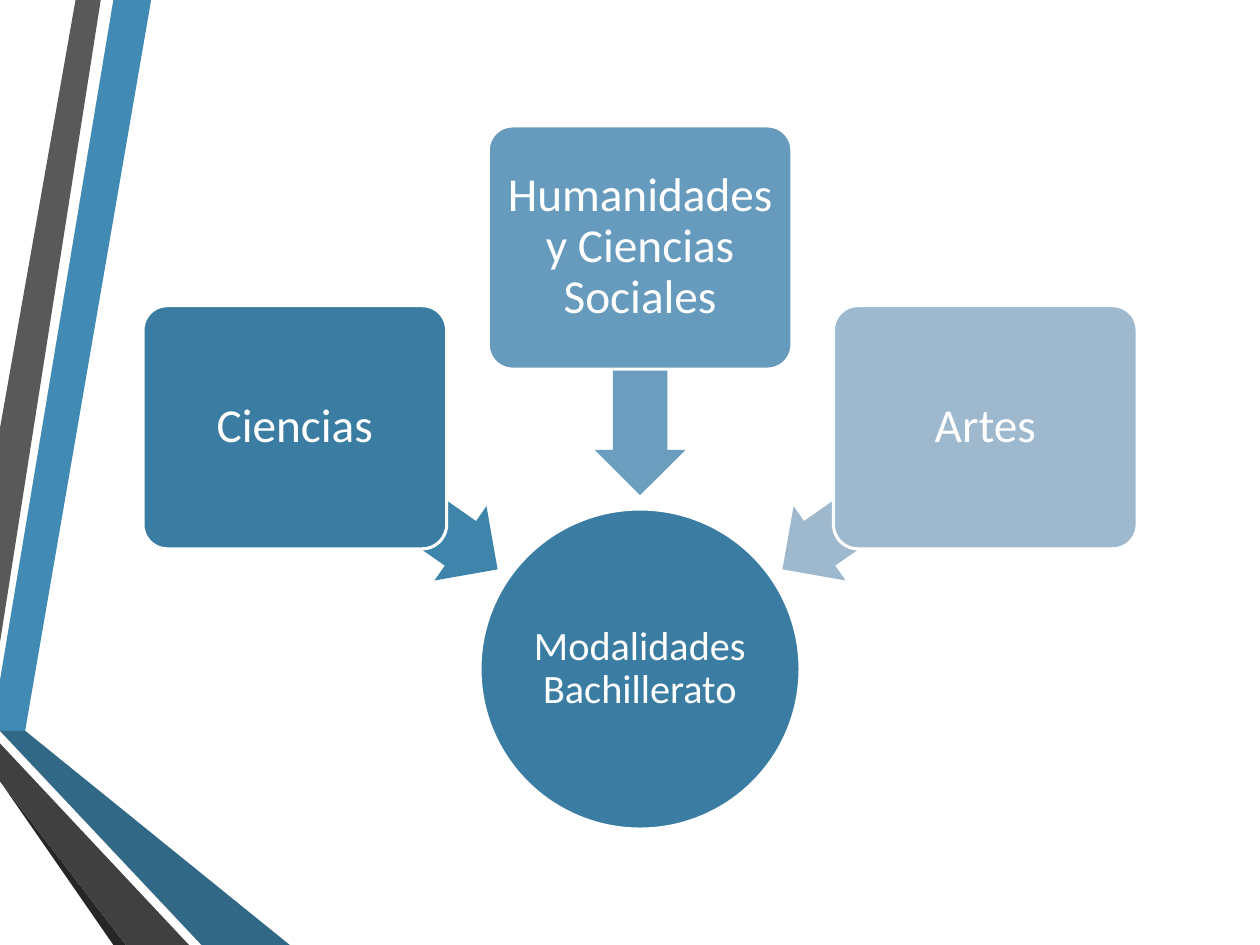
"""Build a slide where three branches of study converge on one hub."""
from dataclasses import dataclass
from math import cos, radians, sin

from pptx import Presentation
from pptx.dml.color import RGBColor
from pptx.enum.shapes import MSO_SHAPE
from pptx.enum.text import MSO_ANCHOR, PP_ALIGN
from pptx.util import Inches, Pt

OVAL, ROUND, ARROW = MSO_SHAPE.OVAL, MSO_SHAPE.ROUNDED_RECTANGLE, MSO_SHAPE.LEFT_ARROW
MIDDLE, CENTER = MSO_ANCHOR.MIDDLE, PP_ALIGN.CENTER
COLS, ROWS = 100, 75
HUB = (50.8, 53.1)
NEAR, FAR = 23.6, 33.45


@dataclass(frozen=True)
class Theme:
    """Hold the colours, font and type sizes."""
    font: str = "Calibri"
    white: str = "FFFFFF"
    hub: str = "3B7DA2"
    large: int = 27
    small: int = 23
    edge: float = 1.75


BANDS = [
    ("418AB3", [(0, 54.4), (0, 57.5), (2.2, 57.9), (11.7, 0), (8.9, 0)]),
    ("595959", [(8.3, 0), (5.5, 0), (0, 33.6), (0, 50.6)]),
    ("262626", [(0, 61.9), (0, 62.1), (9.3, 75), (9.9, 75)]),
    ("20455A", [(0, 57.9), (0, 58), (15.6, 75), (16.3, 75)]),
    ("316886", [(0, 57.9), (16.3, 75), (23.3, 75), (2.2, 57.9), (0, 57.5)]),
    ("404040", [(0, 61.9), (9.9, 75), (15.1, 75), (0, 58.6)]),
]
BRANCHES = [
    ("Ciencias", 215, "3E84AB", "3B7DA2"),
    ("Humanidades y Ciencias Sociales", 270, "6B9DBF", "679BBD"),
    ("Artes", 325, "9EB8CE", "9EB8CE"),
]


class Board:
    """Draw styled elements on a grid over the slide."""

    def __init__(self, deck, theme):
        self.theme = theme
        self.slide = deck.slides.add_slide(deck.slide_layouts[6])
        self.cell = deck.slide_width / COLS

    def paint(self, shape, fill, edge=False):
        """Set the fill and outline of a shape."""
        shape.shadow.inherit = False
        shape.fill.solid()
        shape.fill.fore_color.rgb = RGBColor.from_string(fill)
        if edge:
            shape.line.color.rgb = RGBColor.from_string(self.theme.white)
            shape.line.width = Pt(self.theme.edge)
        else:
            shape.line.fill.background()
        return shape

    def band(self, fill, points):
        """Draw a closed outline through grid points."""
        pen = self.slide.shapes.build_freeform(*points[0], scale=self.cell)
        pen.add_line_segments(points[1:], close=True)
        self.paint(pen.convert_to_shape(), fill)

    def block(self, kind, mid, size, fill, edge=False, adjust=()):
        """Draw a preset shape around a middle point."""
        left, top = (m - s / 2 for m, s in zip(mid, size))
        box = [round(n * self.cell) for n in (left, top, *size)]
        shape = self.slide.shapes.add_shape(kind, *box)
        for spot, value in enumerate(adjust):
            shape.adjustments[spot] = value
        return self.paint(shape, fill, edge)

    def arrow(self, mid, turn, fill):
        """Draw a block arrow turned towards the hub."""
        shape = self.block(ARROW, mid, (19.6, 7.2), fill, adjust=(0.6, 0.5))
        shape.rotation = turn

    def label(self, shape, text, size, inset):
        """Write centred text in a shape."""
        frame = shape.text_frame
        look = {"word_wrap": True, "vertical_anchor": MIDDLE}
        for side in ("left", "top", "right", "bottom"):
            look[f"margin_{side}"] = Inches(inset)
        para = frame.paragraphs[0]
        run = para.add_run()
        run.text = text
        for item, values in (
            (frame, look),
            (para, {"alignment": CENTER, "line_spacing": 0.9}),
            (run.font, {"name": self.theme.font, "size": Pt(size)}),
        ):
            for name, value in values.items():
                setattr(item, name, value)
        run.font.color.rgb = RGBColor.from_string(self.theme.white)


def ray(turn, reach):
    """Return the point at an angle and reach from the hub."""
    angle = radians(turn)
    return HUB[0] + reach * cos(angle), HUB[1] + reach * sin(angle)


def main():
    """Build and save the deck."""
    deck = Presentation()
    deck.slide_width, deck.slide_height = Inches(COLS / 10), Inches(ROWS / 10)
    theme = Theme()
    board = Board(deck, theme)
    for fill, points in BANDS:
        board.band(fill, points)
    hub = board.block(OVAL, HUB, (25.4, 25.4), theme.hub, edge=True)
    board.label(hub, "Modalidades Bachillerato", theme.small, 0.02)
    for text, turn, dart, fill in BRANCHES:
        board.arrow(ray(turn, NEAR), turn, dart)
        box = board.block(ROUND, ray(turn, FAR), (24.1, 19.3), fill, True, (0.1,))
        board.label(box, text, theme.large, 0.06)
    deck.save("out.pptx")


if __name__ == "__main__":
    main()
